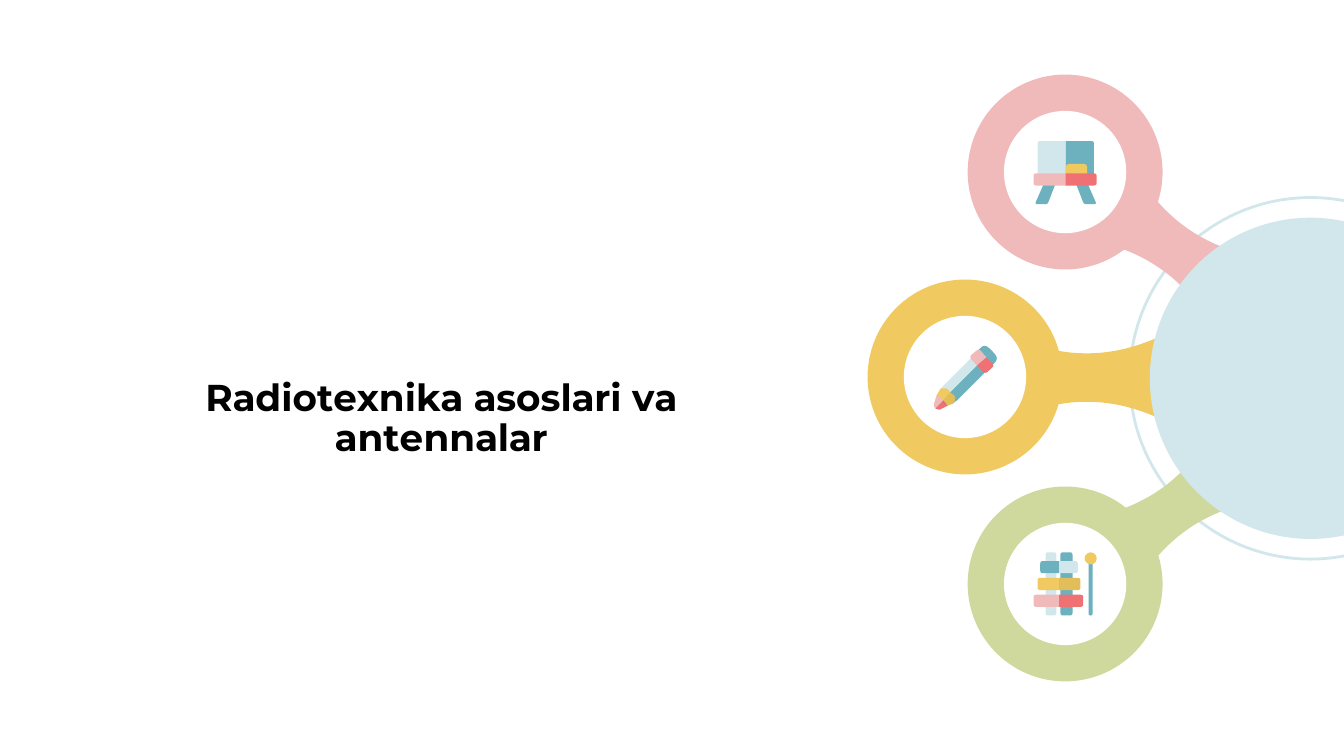
from math import hypot

from lxml import etree
from pptx import Presentation
from pptx.dml.color import RGBColor
from pptx.enum.shapes import MSO_SHAPE
from pptx.enum.text import MSO_ANCHOR, PP_ALIGN
from pptx.oxml.ns import qn
from pptx.util import Inches, Pt

OVAL = MSO_SHAPE.OVAL
CENTER = PP_ALIGN.CENTER
BOTTOM = MSO_ANCHOR.BOTTOM
COLUMNS, ROWS = 100, 56.25
COLORS = {
    "white": "FFFFFF", "black": "000000", "pale": "D1E7EB", "blue": "6DB1BF",
    "pink": "F0BABB", "red": "F07174", "yellow": "F0CA60", "green": "CFD99E",
}


class SlideBuilder:
    """Draw styled elements on a slide using a grid of tenth-inch cells."""

    def __init__(self, presentation):
        self.slide = presentation.slides.add_slide(presentation.slide_layouts[6])
        self.cell = presentation.slide_width / COLUMNS
        self.font = "Montserrat"

    def length(self, cells):
        return round(cells * self.cell)

    def color(self, name):
        return RGBColor.from_string(COLORS[name])

    def paint(self, shape, color, line=None, alpha=None):
        shape.shadow.inherit = False
        shape.fill.solid()
        shape.fill.fore_color.rgb = self.color(color)
        if line:
            shape.line.color.rgb = self.color(line)
            shape.line.width = Pt(1.5)
        else:
            shape.line.fill.background()
        if alpha:
            fill = shape.fill._xPr.find(qn("a:solidFill"))
            etree.SubElement(fill[0], qn("a:alpha"), val=str(alpha * 1000))
        return shape

    def title(self, text, left, top, width, height):
        box = self.slide.shapes.add_textbox(*map(self.length, (left, top, width, height)))
        frame = box.text_frame
        frame.word_wrap = True
        frame.vertical_anchor = BOTTOM
        frame.margin_left = frame.margin_right = self.length(1)
        frame.margin_top = frame.margin_bottom = self.length(1)
        paragraph = frame.paragraphs[0]
        paragraph.alignment = CENTER
        paragraph.line_spacing = 0.9
        run = paragraph.add_run()
        run.text = text
        run.font.name = self.font
        run.font.size = Pt(20)
        run.font.bold = True
        run.font.color.rgb = self.color("black")

    def circle(self, x, y, diameter, color, line=None):
        radius = diameter / 2
        bounds = map(self.length, (x - radius, y - radius, diameter, diameter))
        self.paint(self.slide.shapes.add_shape(OVAL, *bounds), color, line)

    def outline(self, points, color, alpha=None):
        points = [(self.length(x), self.length(y)) for x, y in points]
        builder = self.slide.shapes.build_freeform(*points[0])
        builder.add_line_segments(points[1:], close=True)
        return self.paint(builder.convert_to_shape(), color, alpha=alpha)

    def arm(self, x, y, rotation, color):
        steps = [5.65 * step / 10 for step in range(-10, 11)]
        edge = [(step, 1.8 + 1.35 * (step / 5.65) ** 2) for step in steps]
        points = [(x + dx, y - dy) for dx, dy in edge]
        points += [(x + dx, y + dy) for dx, dy in reversed(edge)]
        self.outline(points, color).rotation = rotation

    def panel(self, corners, color, alpha=None):
        points = []
        for index, (x, y, *radius) in enumerate(corners):
            if not radius or not radius[0]:
                points.append((x, y))
                continue
            ends = []
            for other in (corners[index - 1], corners[(index + 1) % len(corners)]):
                share = radius[0] / hypot(other[0] - x, other[1] - y)
                ends.append((x + (other[0] - x) * share, y + (other[1] - y) * share))
            for t in (0, 0.25, 0.5, 0.75, 1):
                weights = (1 - t) ** 2, 2 * t * (1 - t), t ** 2
                curve = zip(ends[0], (x, y), ends[1])
                points.append(tuple(sum(w * v for w, v in zip(weights, axis)) for axis in curve))
        self.outline(points, color, alpha)

    def bar(self, left, top, right, bottom, color, round_left=0.2, round_right=0.2, alpha=None):
        corners = [(left, top, round_left), (right, top, round_right),
                   (right, bottom, round_right), (left, bottom, round_left)]
        self.panel(corners, color, alpha)

    def split_bar(self, left, top, right, bottom, middle, colors):
        self.bar(left, top, middle, bottom, colors[0], round_right=0)
        self.bar(middle, top, right, bottom, colors[1], round_left=0)

    def board_icon(self):
        middle = 79.3
        for side in (-1, 1):
            leg = [(-1.2, 12.7, 0.1), (-0.5, 13, 0.1), (-1.35, 15.2, 0.2), (-2.3, 15.2, 0.2)]
            self.panel([(middle - side * dx, y, r) for dx, y, r in leg], "blue")
        self.split_bar(77.2, 10.5, 81.4, 13.2, middle, ("pale", "blue"))
        self.bar(middle, 12.2, 80.9, 13.2, "yellow", 0.3, 0.3)
        self.split_bar(76.9, 12.9, 81.6, 13.8, middle, ("pink", "red"))

    def pencil_icon(self):
        pieces = [
            ("blue", [(72.5, 26.4), (73.25, 25.55, 0.5), (73.8, 26.1), (73, 26.9)]),
            ("blue", [(73.8, 26.1), (74.35, 26.7, 0.5), (73.6, 27.4), (73, 26.9)]),
            ("pale", [(72.5, 26.4), (73, 26.9), (72, 28.2), (70.6, 29.5), (69.9, 29.1), (70.1, 28.8)]),
            ("blue", [(73, 26.9), (73.6, 27.4), (71.2, 29.8), (70.9, 30), (70.5, 29.4)]),
            ("pink", [(72.85, 25.95, 0.2), (73.4, 26.6), (72.7, 27.2), (72.1, 26.55, 0.3)]),
            ("red", [(73.4, 26.6), (73.98, 27.2, 0.2), (73.3, 27.85, 0.3), (72.7, 27.2)]),
            ("yellow", [(70, 28.9), (70.5, 28.9, 0.2), (70.7, 29.2), (70.5, 29.8), (70.1, 29.9), (69.7, 29.4)]),
            ("yellow", [(70.7, 29.2), (71.1, 29.5, 0.2), (71, 30), (70.5, 30.2), (70.1, 29.9)]),
            ("pink", [(69.7, 29.4), (70.2, 29.8), (70.1, 30.1), (69.6, 30.4), (69.45, 30.2, 0.2)]),
            ("red", [(70.2, 29.8), (70.5, 30.2), (69.9, 30.5, 0.1), (69.6, 30.4)]),
        ]
        for color, corners in pieces:
            self.panel(corners, color)
        self.panel(pieces[7][1], "black", 6)

    def xylophone_icon(self):
        middle = 78.8
        self.bar(81, 41.7, 81.3, 45.8, "blue", 0.15, 0.15)
        self.bar(77.8, 41.1, 78.6, 45.8, "pale")
        self.bar(78.9, 41.1, 79.8, 45.8, "blue")
        keys = [(77.4, 80.2, ("blue", "pale")), (77.2, 80.4, ("yellow", "yellow")),
                (76.9, 80.6, ("pink", "red"))]
        for index, (left, right, colors) in enumerate(keys):
            top = 41.75 + 1.25 * index
            self.split_bar(left, top, right, top + 0.9, middle, colors)
        self.circle(81.15, 41.55, 0.9, "yellow")
        self.bar(middle, 43, 80.4, 43.9, "black", 0, alpha=6)


def main():
    presentation = Presentation()
    presentation.slide_width = Inches(COLUMNS / 10)
    presentation.slide_height = Inches(ROWS / 10)
    builder = SlideBuilder(presentation)
    builder.title("Rаdiоtехnikа аsоslаri vа аntеnnаlаr", 6.2, 11.3, 53.3, 23.9)
    hub = (97.5, 28.15)
    builder.circle(*hub, 26.9, "white", "pale")
    builder.arm(87.35, 18.5, 34.8, "pink")
    builder.arm(87.35, 37.9, 325.2, "green")
    builder.arm(80.85, 28.1, 0, "yellow")
    builder.circle(*hub, 23.9, "pale")
    rings = [(79.25, 12.8, "pink"), (71.8, 28.05, "yellow"), (79.25, 43.45, "green")]
    for x, y, color in rings:
        builder.circle(x, y, 14.5, color)
        builder.circle(x, y, 9.1, "white")
    builder.board_icon()
    builder.pencil_icon()
    builder.xylophone_icon()
    presentation.save("out.pptx")


if __name__ == "__main__":
    main()
